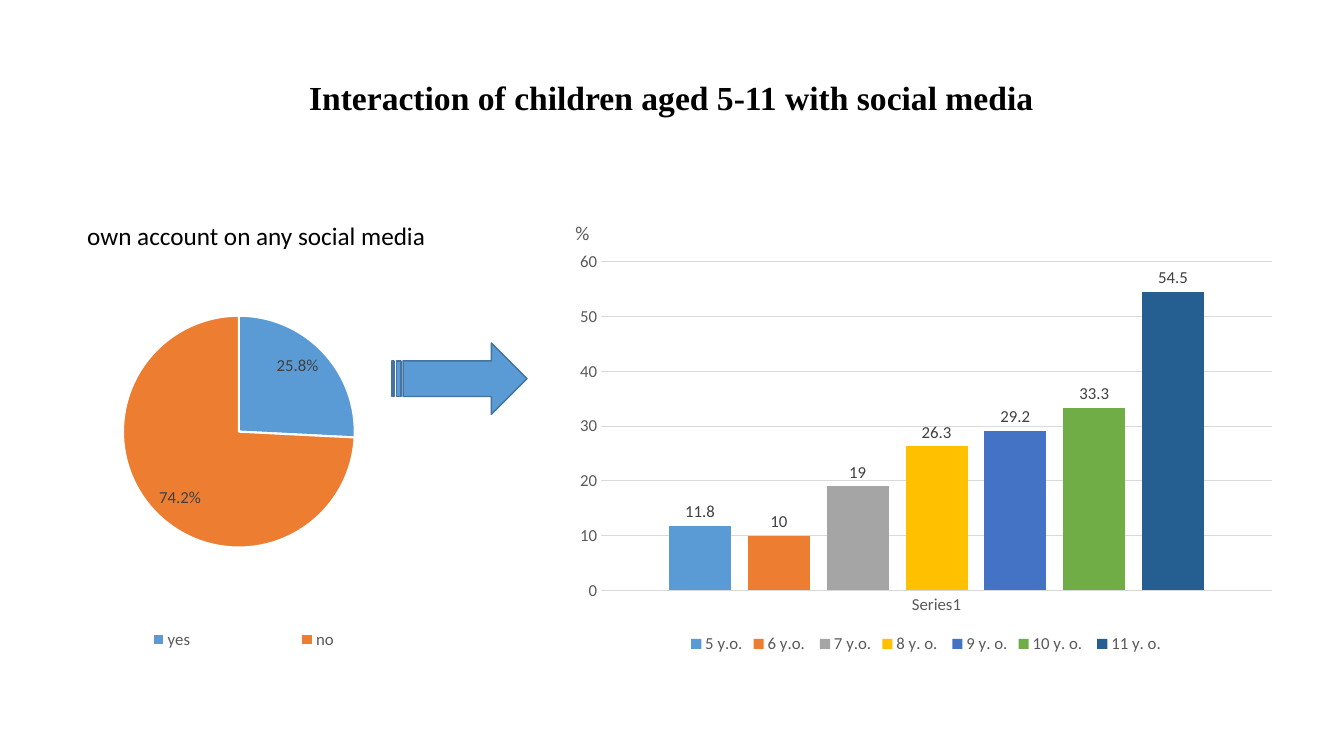
import pptx
import pptx.chart.data
import pptx.dml.color
import pptx.enum.chart
import pptx.enum.shapes
import pptx.enum.text
import pptx.oxml
import pptx.oxml.ns
import pptx.util
from dataclasses import dataclass

Pt = pptx.util.Pt
RGB = pptx.dml.color.RGBColor.from_string
ChartType = pptx.enum.chart.XL_CHART_TYPE
LabelPosition = pptx.enum.chart.XL_LABEL_POSITION
Align = pptx.enum.text.PP_ALIGN


@dataclass(frozen=True)
class Theme:
    heading_font: str = "Times New Roman"
    body_font: str = "Calibri"
    title_size: int = 24
    caption_size: int = 18
    unit_size: int = 14
    chart_size: int = 12
    black: str = "000000"
    gray: str = "595959"
    label: str = "404040"
    grid: str = "D9D9D9"
    white: str = "FFFFFF"
    arrow_line: str = "43739E"
    accents: tuple = ("5B9BD5", "ED7D31", "A5A5A5", "FFC000",
                      "4472C4", "70AD47", "255E91")


theme = Theme()


def set_font(font, size, color, name=theme.body_font, bold=False):
    for attribute, value in {"size": Pt(size), "name": name, "bold": bold}.items():
        setattr(font, attribute, value)
    font.color.rgb = RGB(color)


def set_layout(element, x, y, w, h, inner=False):
    """Place a chart part by fractions of the chart's width and height."""
    values = {"xMode": "edge", "yMode": "edge", "x": x, "y": y, "w": w, "h": h}
    if inner:
        values = {"layoutTarget": "inner", **values}
    children = "".join(f'<c:{tag} val="{value}"/>' for tag, value in values.items())
    layout = pptx.oxml.parse_xml(
        f'<c:layout {pptx.oxml.ns.nsdecls("c")}>'
        f'<c:manualLayout>{children}</c:manualLayout></c:layout>')
    for old in element.findall(pptx.oxml.ns.qn("c:layout")):
        element.remove(old)
    position = element.find(pptx.oxml.ns.qn("c:legendPos"))
    if position is None:
        element.insert(0, layout)
    else:
        position.addnext(layout)


presentation = pptx.Presentation()
presentation.slide_width = Pt(960)
presentation.slide_height = Pt(540)
slide = presentation.slides.add_slide(presentation.slide_layouts[5])

# Title and captions
title = slide.shapes.title
title.left, title.top, title.width, title.height = Pt(170), Pt(51), Pt(619), Pt(36)
caption = slide.shapes.add_textbox(Pt(17), Pt(154), Pt(332), Pt(29))
unit = slide.shapes.add_textbox(Pt(404), Pt(154), Pt(31), Pt(24))
texts = [
    (title, "Interaction of children aged 5-11 with social media", Align.CENTER,
     theme.title_size, theme.black, theme.heading_font, True),
    (caption, "own account on any social media", Align.CENTER,
     theme.caption_size, theme.black, theme.body_font, False),
    (unit, "%", Align.LEFT, theme.unit_size, theme.gray, theme.body_font, False),
]
for shape, text, alignment, size, color, name, bold in texts:
    frame = shape.text_frame
    frame.text = text
    frame.word_wrap = True
    frame.auto_size = pptx.enum.text.MSO_AUTO_SIZE.NONE
    frame.vertical_anchor = pptx.enum.text.MSO_ANCHOR.TOP
    paragraph = frame.paragraphs[0]
    paragraph.alignment = alignment
    set_font(paragraph.runs[0].font, size, color, name, bold)

# Charts
account_data = pptx.chart.data.CategoryChartData(number_format='0.0"%"')
account_data.categories = ["yes", "no"]
account_data.add_series("Series 1", [25.8, 74.2])

age_data = pptx.chart.data.CategoryChartData()
age_data.categories = ["Series1"]
shares = {"5 y.o.": 11.8, "6 y.o. ": 10, "7 y.o.": 19, "8 y. o. ": 26.3,
          "9 y. o.": 29.2, "10 y. o. ": 33.3, "11 y. o.": 54.5}
for age, share in shares.items():
    age_data.add_series(age, [share])

account_chart = slide.shapes.add_chart(
    ChartType.PIE, Pt(0), Pt(166), Pt(338), Pt(313), account_data).chart
age_chart = slide.shapes.add_chart(
    ChartType.COLUMN_CLUSTERED, Pt(404), Pt(174), Pt(515), Pt(296), age_data).chart

for chart, position, number_format in [
        (account_chart, LabelPosition.INSIDE_END, '0.0"%"'),
        (age_chart, LabelPosition.OUTSIDE_END, "General")]:
    chart.has_title = False
    set_font(chart.font, theme.chart_size, theme.gray)
    chart.has_legend = True
    chart.legend.position = pptx.enum.chart.XL_LEGEND_POSITION.BOTTOM
    chart.legend.include_in_layout = False
    set_font(chart.legend.font, theme.chart_size, theme.gray)
    plot = chart.plots[0]
    plot.has_data_labels = True
    labels = plot.data_labels
    for attribute, value in {"show_value": True, "show_percentage": False,
                             "position": position, "number_format": number_format,
                             "number_format_is_linked": False}.items():
        setattr(labels, attribute, value)
    set_font(labels.font, theme.chart_size, theme.label)

account_plot = account_chart.plots[0]
account_plot.vary_by_categories = True
for index, color in enumerate(theme.accents[:2]):
    sector = account_plot.series[0].points[index].format
    sector.fill.solid()
    sector.fill.fore_color.rgb = RGB(color)
    sector.line.color.rgb = RGB(theme.white)
    sector.line.width = Pt(1.5)
set_layout(account_chart.plots[0]._element.getparent(), 0.26, 0.17, 0.49, 0.57, inner=True)
set_layout(account_chart.legend._element, 0.1, 0.89, 0.83, 0.08)

age_plot = age_chart.plots[0]
for attribute, value in {"gap_width": 219, "overlap": -27,
                         "vary_by_categories": False}.items():
    setattr(age_plot, attribute, value)
for series, color in zip(age_plot.series, theme.accents):
    series.format.fill.solid()
    series.format.fill.fore_color.rgb = RGB(color)

age_axis, share_axis = age_chart.category_axis, age_chart.value_axis
for axis in (age_axis, share_axis):
    axis.major_tick_mark = pptx.enum.chart.XL_TICK_MARK.NONE
    axis.minor_tick_mark = pptx.enum.chart.XL_TICK_MARK.NONE
    set_font(axis.tick_labels.font, theme.chart_size, theme.gray)
for attribute, value in {"minimum_scale": 0, "maximum_scale": 60, "major_unit": 10,
                         "has_major_gridlines": True}.items():
    setattr(share_axis, attribute, value)
share_axis.format.line.fill.background()
for line in (age_axis.format.line, share_axis.major_gridlines.format.line):
    line.color.rgb = RGB(theme.grid)
    line.width = Pt(0.75)

# Arrow from the accounts to the ages
arrow = slide.shapes.add_shape(
    pptx.enum.shapes.MSO_SHAPE.STRIPED_RIGHT_ARROW, Pt(280), Pt(245), Pt(96.5), Pt(51))
arrow.shadow.inherit = False
arrow.fill.solid()
arrow.fill.fore_color.rgb = RGB(theme.accents[0])
arrow.line.color.rgb = RGB(theme.arrow_line)
arrow.line.width = Pt(1)

presentation.save("out.pptx")
